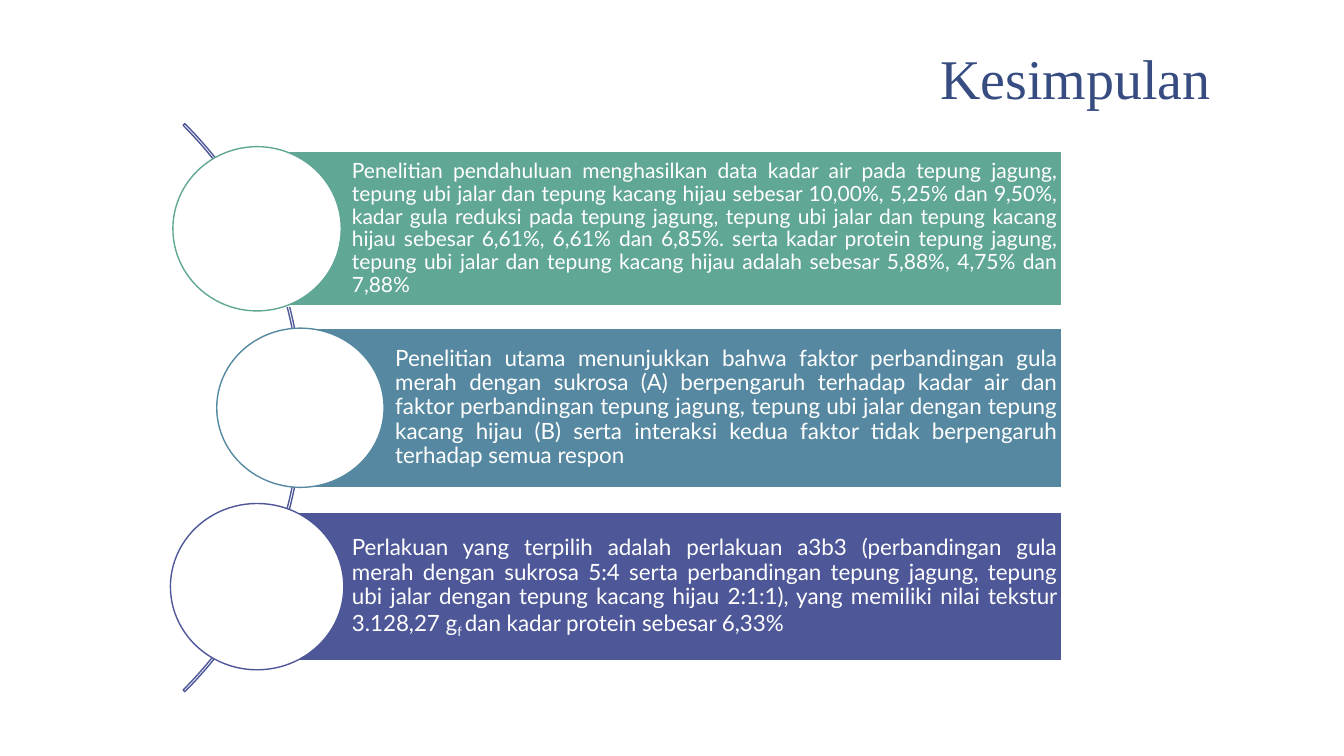
from pptx import Presentation
from pptx.dml.color import RGBColor
from pptx.enum.shapes import MSO_SHAPE
from pptx.enum.text import MSO_ANCHOR, PP_ALIGN
from pptx.util import Inches, Pt

COLORS = {
    "white": "FFFFFF",
    "green": "61A796",
    "blue": "5689A1",
    "violet": "4E5798",
    "navy": "374C81",
}

POINTS = [
    dict(
        box=(2.55, 1.5, 7.98, 1.54), disc=(1.67, 1.63), color="green", size=15,
        runs=[(
            "Penelitian pendahuluan menghasilkan data kadar air pada tepung jagung, "
            "tepung ubi jalar dan tepung kacang hijau sebesar 10,00%, 5,25% dan 9,50%, "
            "kadar gula reduksi pada tepung jagung, tepung ubi jalar dan tepung kacang "
            "hijau sebesar 6,61%, 6,61% dan 6,85%. serta kadar protein tepung jagung, "
            "tepung ubi jalar dan tepung kacang hijau adalah sebesar 5,88%, 4,75% dan "
            "7,88%", 0)],
    ),
    dict(
        box=(2.98, 3.25, 7.55, 1.59), disc=(1.66, 1.58), color="blue", size=16,
        runs=[(
            "Penelitian utama menunjukkan bahwa faktor perbandingan gula merah dengan "
            "sukrosa (A) berpengaruh terhadap kadar air dan faktor perbandingan tepung "
            "jagung, tepung ubi jalar dengan tepung kacang hijau (B) serta interaksi "
            "kedua faktor tidak berpengaruh terhadap semua respon", 0)],
    ),
    dict(
        box=(2.55, 5.08, 7.98, 1.48), disc=(1.72, 1.65), color="violet", size=16,
        runs=[
            ("Perlakuan yang terpilih adalah perlakuan a3b3 (perbandingan gula merah "
             "dengan sukrosa 5:4 serta perbandingan tepung jagung, tepung ubi jalar "
             "dengan tepung kacang hijau 2:1:1), yang memiliki nilai tekstur "
             "3.128,27 g", 0),
            ("f ", -25),
            ("dan kadar protein sebesar 6,33%", 0),
        ],
    ),
]


def rgb(name):
    return RGBColor.from_string(COLORS[name])


def add_form(slide, kind, box, fill, line, width):
    form = slide.shapes.add_shape(kind, *map(Inches, box))
    form.shadow.inherit = False
    if fill:
        form.fill.solid()
        form.fill.fore_color.rgb = rgb(fill)
    else:
        form.fill.background()
    form.line.color.rgb = rgb(line)
    form.line.width = Pt(width)
    return form


def write(shape, runs, font, size, color, align, anchor, pads, space):
    frame = shape.text_frame
    frame.word_wrap = True
    frame.vertical_anchor = anchor
    (frame.margin_left, frame.margin_top,
     frame.margin_right, frame.margin_bottom) = map(Inches, pads)
    para = frame.paragraphs[0]
    para.alignment = align
    para.line_spacing = space
    for text, base in runs:
        run = para.add_run()
        run.text = text
        run.font.name = font
        run.font.size = Pt(size)
        run.font.color.rgb = rgb(color)
        if base:
            run._r.get_or_add_rPr().set("baseline", str(base * 1000))


def add_title(slide, box):
    title = slide.shapes.add_textbox(*map(Inches, box))
    write(title, [("Kesimpulan", 0)], font="Times New Roman", size=40,
          color="navy", align=PP_ALIGN.CENTER, anchor=MSO_ANCHOR.BOTTOM,
          pads=(0.13, 0.07, 0.13, 0.07), space=0.85)


def add_arc(slide, box):
    arc = add_form(slide, MSO_SHAPE.BLOCK_ARC, box, None, "violet", 1)
    for i, value in enumerate((189, 27, 0.003)):
        arc.adjustments[i] = value


def add_point(slide, box, disc, color, size, runs):
    left, top, width, height = box
    bar = add_form(slide, MSO_SHAPE.RECTANGLE, box, color, "white", 1.5)
    write(bar, runs, font="Lato", size=size, color="white",
          align=PP_ALIGN.JUSTIFY, anchor=MSO_ANCHOR.MIDDLE,
          pads=(0.94, 0.04, 0.04, 0.04), space=0.9)
    wide, high = disc
    place = (left - wide / 2, top + (height - high) / 2, wide, high)
    add_form(slide, MSO_SHAPE.OVAL, place, "white", color, 1)


def main():
    deck = Presentation()
    deck.slide_width = Inches(13.33)
    deck.slide_height = Inches(7.5)
    slide = deck.slides.add_slide(deck.slide_layouts[6])
    add_arc(slide, (-4.97, 0.06, 7.97, 7.97))
    for point in POINTS:
        add_point(slide, **point)
    add_title(slide, (8.08, 0.39, 5.17, 0.78))
    deck.save("out.pptx")


if __name__ == "__main__":
    main()
